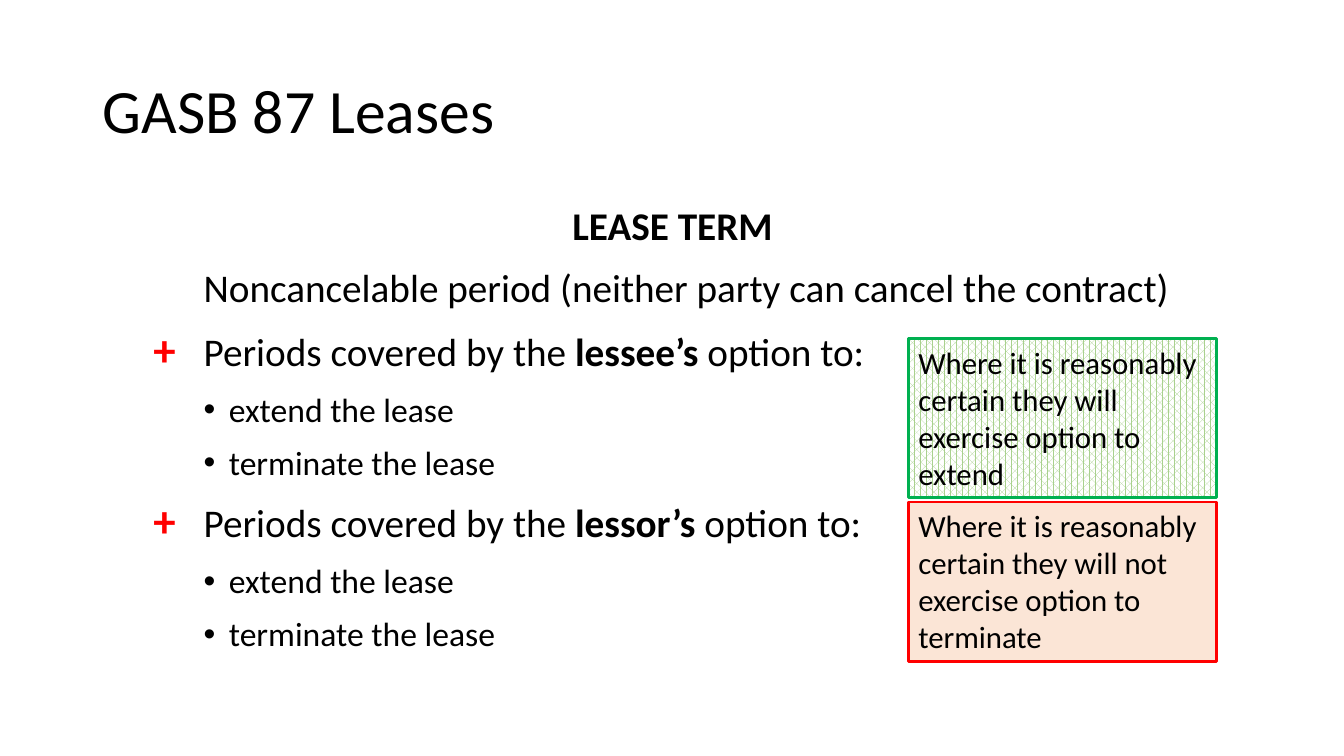
from dataclasses import dataclass

from lxml.etree import SubElement
from pptx import Presentation
from pptx.dml.color import RGBColor
from pptx.enum.dml import MSO_PATTERN
from pptx.enum.shapes import MSO_SHAPE
from pptx.enum.text import MSO_ANCHOR, MSO_AUTO_SIZE, PP_ALIGN
from pptx.oxml.ns import qn
from pptx.util import Inches, Pt

FONT = "Calibri"
BLACK = "000000"
RED = "FF0000"


@dataclass
class Span:
    text: str
    size: float = 28
    bold: bool = False
    color: str = BLACK


@dataclass
class Line:
    spans: list[Span]
    margin: float = 0
    indent: float = 0
    level: int = 0
    bullet: str = ""
    align: PP_ALIGN = PP_ALIGN.LEFT
    before: float = 6


@dataclass
class Condition:
    text: str
    top: float
    fill: str
    border: str
    patterned: bool = False


def rgb(color: str) -> RGBColor:
    return RGBColor.from_string(color)


def add_text(paragraph, text: str, *, size: float, bold: bool = False, color: str = BLACK) -> None:
    run = paragraph.add_run()
    run.text = text
    run.font.name = FONT
    run.font.size = Pt(size)
    run.font.bold = bold
    run.font.color.rgb = rgb(color)


def place(shape, left: float, top: float, width: float, height: float) -> None:
    shape.left, shape.top = Inches(left), Inches(top)
    shape.width, shape.height = Inches(width), Inches(height)


def write_line(paragraph, line: Line) -> None:
    paragraph.level = line.level
    paragraph.alignment = line.align
    paragraph.line_spacing = 0.9
    paragraph.space_before = Pt(line.before)
    paragraph.space_after = Pt(6)
    properties = paragraph._p.get_or_add_pPr()
    properties.set("marL", str(Inches(line.margin)))
    properties.set("indent", str(Inches(line.indent)))
    if line.bullet:
        SubElement(properties, qn("a:buFont"), typeface="Arial")
        SubElement(properties, qn("a:buChar"), char=line.bullet)
    else:
        SubElement(properties, qn("a:buNone"))
    for span in line.spans:
        add_text(paragraph, span.text, size=span.size, bold=span.bold, color=span.color)


def option_lines(party: str) -> list[Line]:
    heading = Line(
        [
            Span("+", size=32, bold=True, color=RED),
            Span("\tPeriods covered by the "),
            Span(party, bold=True),
            Span(" option to:"),
        ],
        margin=1, indent=-0.5,
    )
    choices = [
        Line([Span(choice, size=24)], margin=1.25, indent=-0.25, level=1, bullet="•")
        for choice in ("extend the lease", "terminate the lease")
    ]
    return [heading, *choices]


def add_condition(slide, condition: Condition) -> None:
    box = slide.shapes.add_shape(
        MSO_SHAPE.RECTANGLE, Inches(9.01), Inches(condition.top), Inches(3.06), Inches(1.58)
    )
    box.shadow.inherit = False
    if condition.patterned:
        box.fill.patterned()
        box.fill.pattern = MSO_PATTERN.PERCENT_60
        box.fill.fore_color.rgb = rgb(condition.fill)
        box.fill.back_color.rgb = rgb("FFFFFF")
    else:
        box.fill.solid()
        box.fill.fore_color.rgb = rgb(condition.fill)
    box.line.color.rgb = rgb(condition.border)
    box.line.width = Pt(2)
    frame = box.text_frame
    frame.word_wrap = True
    frame.auto_size = MSO_AUTO_SIZE.SHAPE_TO_FIT_TEXT
    frame.vertical_anchor = MSO_ANCHOR.TOP
    frame.paragraphs[0].alignment = PP_ALIGN.LEFT
    add_text(frame.paragraphs[0], condition.text, size=22)


LEASE_TERM = [
    Line([Span("LEASE TERM", bold=True)], align=PP_ALIGN.CENTER),
    Line([Span("Noncancelable period (neither party can cancel the contract)")], margin=1, before=8),
    *option_lines("lessee’s"),
    *option_lines("lessor’s"),
]

CONDITIONS = [
    Condition("Where it is reasonably certain they will exercise option to extend",
              3.36, "A9D18E", "00B050", patterned=True),
    Condition("Where it is reasonably certain they will not exercise option to terminate",
              4.98, "FBE5D6", RED),
]


def main() -> None:
    presentation = Presentation()
    presentation.slide_width = Inches(13.33)
    presentation.slide_height = Inches(7.5)
    slide = presentation.slides.add_slide(presentation.slide_layouts[1])

    title = slide.shapes.title
    place(title, 0.92, 0.4, 11.5, 1.45)
    title.text_frame.vertical_anchor = MSO_ANCHOR.MIDDLE
    heading = title.text_frame.paragraphs[0]
    heading.alignment = PP_ALIGN.LEFT
    heading.line_spacing = 0.9
    add_text(heading, "GASB 87 Leases", size=44)

    body = slide.placeholders[1]
    place(body, 0.92, 2, 11.5, 5.31)
    frame = body.text_frame
    frame.auto_size = MSO_AUTO_SIZE.NONE
    for index, line in enumerate(LEASE_TERM):
        write_line(frame.add_paragraph() if index else frame.paragraphs[0], line)

    for condition in CONDITIONS:
        add_condition(slide, condition)
    presentation.save("out.pptx")


if __name__ == "__main__":
    main()
